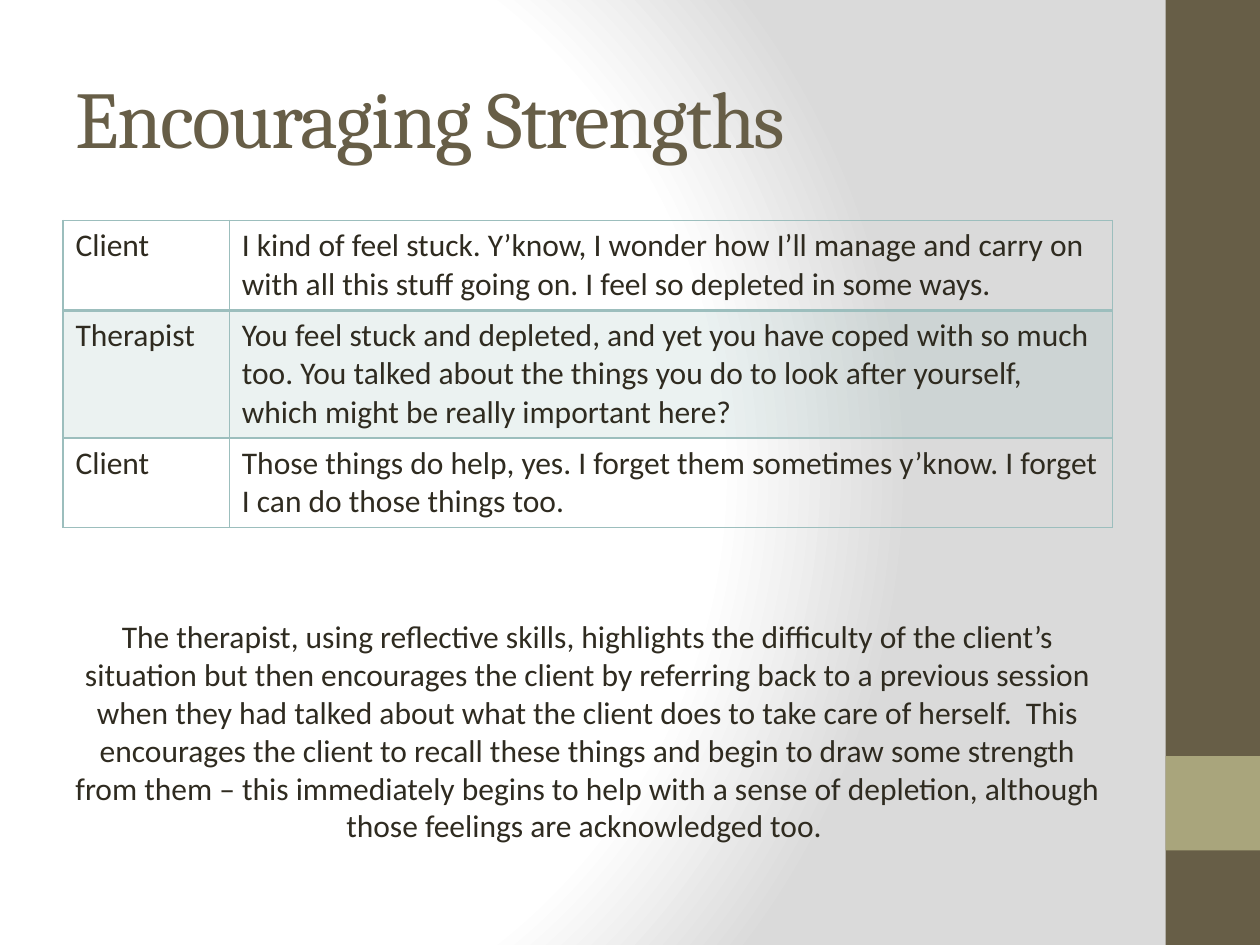
from lxml.etree import SubElement
from pptx import Presentation
from pptx.dml.color import RGBColor
from pptx.enum.shapes import MSO_SHAPE as SHAPE
from pptx.enum.text import MSO_ANCHOR as ANCHOR, MSO_AUTO_SIZE as AUTO, PP_ALIGN as ALIGN
from pptx.oxml import parse_xml
from pptx.oxml.ns import nsdecls, qn
from pptx.util import Inches, Pt

OLIVE, SAGE, TEAL, INK = "675E47", "A9A57C", "9CBEBD", "2F2B20"
LEFT, WIDTH, BAR = 0.5, 8.33, 0.75


def color(value):
    return RGBColor.from_string(value)


def write(tf, text, size, font, ink, align=ALIGN.LEFT):
    tf.word_wrap = True
    p = tf.paragraphs[0]
    p.alignment = align
    r = p.add_run()
    r.text = text
    for name, value in {"size": Pt(size), "name": font, "bold": False}.items():
        setattr(r.font, name, value)
    r.font.color.rgb = color(ink)
    return r


prs = Presentation()
prs.slide_width, prs.slide_height = Inches(10), Inches(7.5)
s = prs.slides.add_slide(prs.slide_layouts[5])

stops = "".join(
    f'<a:gs pos="{pos * 1000}"><a:srgbClr val="{value}"/></a:gs>'
    for pos, value in [(0, "FFFFFF"), (75, "FFFFFF"), (100, "DADADA")]
)
s._element.cSld.insert(0, parse_xml(
    f'<p:bg {nsdecls("p", "a")}><p:bgPr><a:gradFill rotWithShape="1">'
    f'<a:gsLst>{stops}</a:gsLst><a:path path="circle">'
    '<a:fillToRect l="20000" t="50000" r="100000" b="50000"/></a:path>'
    '</a:gradFill><a:effectLst/></p:bgPr></p:bg>'
))

for top, height, fill in [(0, 10 * BAR, OLIVE), (8 * BAR, BAR, SAGE)]:
    sp = s.shapes.add_shape(
        SHAPE.RECTANGLE, Inches(10 - BAR), Inches(top), Inches(BAR), Inches(height))
    sp.shadow.inherit = False
    sp.fill.solid()
    sp.fill.fore_color.rgb = color(fill)
    sp.line.fill.background()

title = s.shapes.title
box = {"left": LEFT, "top": 0.3, "width": WIDTH, "height": 1.25}
for name, value in box.items():
    setattr(title, name, Inches(value))
title.text_frame.vertical_anchor = ANCHOR.MIDDLE
r = write(title.text_frame, "Encouraging Strengths", 46, "Cambria", OLIVE)
r.font._element.set("spc", "-100")

dialogue = [
    ("Client", "I kind of feel stuck. Y’know, I wonder how I’ll manage and carry on "
     "with all this stuff going on. I feel so depleted in some ways."),
    ("Therapist", "You feel stuck and depleted, and yet you have coped with so much too. "
     "You talked about the things you do to look after yourself, "
     "which might be really important here?"),
    ("Client", "Those things do help, yes. I forget them sometimes y’know. "
     "I forget I can do those things too."),
]
row_heights = [0.71, 1.01, 0.71]
table = s.shapes.add_table(
    len(dialogue), 2, Inches(LEFT), Inches(1.75), Inches(WIDTH),
    Inches(sum(row_heights))).table
table.first_row = table.horz_banding = False
for column, width in zip(table.columns, [1.32, WIDTH - 1.32]):
    column.width = Inches(width)

for i, (row, line) in enumerate(zip(table.rows, dialogue)):
    row.height = Inches(row_heights[i])
    for cell, text in zip(row.cells, line):
        write(cell.text_frame, text, 18, "Calibri", INK)
        if i == 1:
            cell.fill.solid()
            cell.fill.fore_color.rgb = color(TEAL)
            tint = next(cell._tc.tcPr.iter(qn("a:srgbClr")))
            SubElement(tint, qn("a:alpha"), val="20000")
        else:
            cell.fill.background()
        weights = {"L": 1, "R": 1, "T": 2 if i == 1 else 1, "B": 2 if i == 0 else 1}
        for n, (side, weight) in enumerate(weights.items()):
            cell._tc.tcPr.insert(n, parse_xml(
                f'<a:ln{side} {nsdecls("a")} w="{Pt(weight)}"><a:solidFill>'
                f'<a:srgbClr val="{TEAL}"/></a:solidFill></a:ln{side}>'))

note = s.shapes.add_textbox(Inches(LEFT), Inches(4.85), Inches(WIDTH), Inches(1.92))
note.text_frame.auto_size = AUTO.SHAPE_TO_FIT_TEXT
write(
    note.text_frame,
    "The therapist, using reflective skills, highlights the difficulty of the client’s "
    "situation but then encourages the client by referring back to a previous session "
    "when they had talked about what the client does to take care of herself.  This "
    "encourages the client to recall these things and begin to draw some strength from "
    "them – this immediately begins to help with a sense of depletion, although those "
    "feelings are acknowledged too. ",
    18, "Calibri", INK, ALIGN.CENTER)

prs.save("out.pptx")
